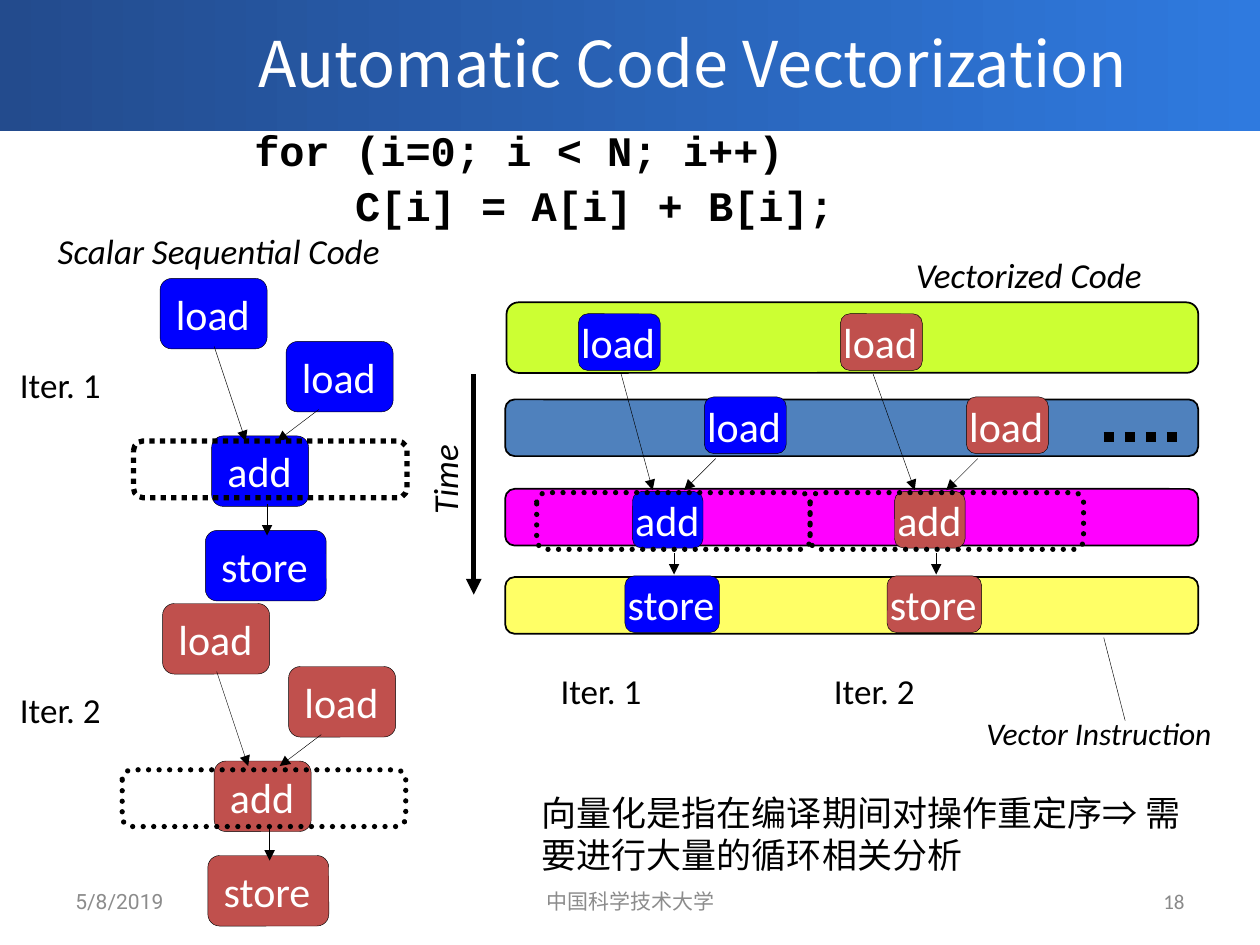
from lxml.etree import SubElement
from pptx import Presentation
from pptx.dml.color import RGBColor
from pptx.enum.dml import MSO_LINE
from pptx.enum.shapes import MSO_CONNECTOR, MSO_SHAPE
from pptx.enum.text import MSO_ANCHOR, MSO_AUTO_SIZE, PP_ALIGN
from pptx.oxml.ns import qn
from pptx.util import Inches, Pt

BLACK, WHITE, BLUE, RED, GREY = "000000", "FFFFFF", "0000FF", "C0504D", "8C8C8C"
LEFT, CENTER, RIGHT = PP_ALIGN.LEFT, PP_ALIGN.CENTER, PP_ALIGN.RIGHT

TITLE = "Automatic Code Vectorization"
LOOP = ["for (i=0; i < N; i++)", "    C[i] = A[i] + B[i];"]
SUMMARY = "向量化是指在编译期间对操作重定序⇒ 需要进行大量的循环相关分析"
FOOTERS = [  # text, left, width, alignment, font, colour
    ("5/8/2019", 0.5, 2.33, LEFT, "Roboto", GREY),
    ("中国科学技术大学", 3.42, 3.17, CENTER, "Roboto", GREY),
    ("18", 7.17, 2.33, RIGHT, "Calibri", "898989"),
]

# Operations of the first iteration: name, left, top, width
SCALAR_OPS = [("load", 1.27, 2.21, 0.85), ("load", 2.27, 2.71, 0.85),
              ("add", 1.68, 3.46, 0.77), ("store", 1.63, 4.21, 0.96)]
SCALAR_ARROWS = [(1.7, 2.75, 1.95, 3.5), (2.53, 3.25, 2.2, 3.5), (2.12, 4, 2.12, 4.25)]
VECTOR_OPS = [("load", 4.59, 2.49, 0.65), ("load", 5.59, 3.15, 0.65),
              ("add", 5.02, 3.9, 0.56), ("store", 4.96, 4.57, 0.75)]
VECTOR_ARROWS = [(5.68, 3.64, 5.43, 3.89), (5.35, 4.39, 5.35, 4.56)]

# Iterations: label, colour, shift from the first one, and what differs
SCALAR_ITERATIONS = [
    ("Iter. 1", BLUE, 0, 0, (1.06, 3.5, 2.17, 0.45), "flat"),
    ("Iter. 2", RED, 0.02, 2.58, (0.97, 6.11, 2.25, 0.45), "rnd"),
]
VECTOR_ITERATIONS = [
    ("Iter. 1", BLUE, 0, (4.93, 2.97, 5.18, 3.89)),
    ("Iter. 2", RED, 2.08, (6.93, 2.97, 7.26, 3.89)),
]
VECTOR_BANDS = [  # left, top, width, height, colour
    (4.01, 3.17, 5.5, 0.45, "4F81BD"), (4.02, 2.4, 5.49, 0.56, "CCFF33"),
    (4.01, 3.88, 5.5, 0.45, "FF00FF"), (4.01, 4.58, 5.5, 0.45, "FFFF66"),
]


def rgb(value):
    return RGBColor.from_string(value)


def write(shape, lines, wrap=False, grow=True, inset=None, anchor=MSO_ANCHOR.MIDDLE,
          align=LEFT, color=BLACK, space=0, **font):
    """Fill a shape with paragraphs that share one format."""
    frame = shape.text_frame
    frame.text = "\n".join(lines)
    frame.word_wrap = wrap
    frame.vertical_anchor = anchor
    frame.auto_size = MSO_AUTO_SIZE.SHAPE_TO_FIT_TEXT if grow else MSO_AUTO_SIZE.NONE
    if inset is not None:
        for side in ("left", "top", "right", "bottom"):
            setattr(frame, f"margin_{side}", Inches(inset))
    for index, paragraph in enumerate(frame.paragraphs):
        paragraph.alignment = align
        if index:
            paragraph.space_before = Pt(space)
        for run in paragraph.runs:
            run.font.color.rgb = rgb(color)
            for name, value in font.items():
                setattr(run.font, name, value)


def label(shapes, box, *lines, size=20, name="Calibri", **options):
    caption = shapes.add_textbox(*map(Inches, box))
    write(caption, lines, size=Pt(size), name=name, **options)
    return caption


def stroke(line, weight, dotted):
    line.color.rgb = rgb(BLACK)
    line.width = Pt(weight)
    if dotted:
        line.dash_style = MSO_LINE.ROUND_DOT


def rounded(shapes, box, fill=None, weight=0.25, dotted=False, cap="flat"):
    shape = shapes.add_shape(MSO_SHAPE.ROUNDED_RECTANGLE, *map(Inches, box))
    shape.shadow.inherit = False
    if fill:
        shape.fill.solid()
        shape.fill.fore_color.rgb = rgb(fill)
    else:
        shape.fill.background()
    stroke(shape.line, weight, dotted)
    shape.element.spPr.find(qn("a:ln")).set("cap", cap)
    return shape


def line(shapes, ends, weight=0.25, dotted=False, arrow=True):
    connector = shapes.add_connector(MSO_CONNECTOR.STRAIGHT, *map(Inches, ends))
    stroke(connector.line, weight, dotted)
    properties = connector.element.spPr
    if arrow:
        SubElement(properties.find(qn("a:ln")), qn("a:tailEnd"), type="triangle")
    SubElement(properties, qn("a:effectLst"))


def iteration(shapes, ops, arrows, color, dx, dy, height, inset=None):
    """Draw the operations of one loop iteration and the arrows between them."""
    for name, left, top, width in ops:
        op = rounded(shapes, (left + dx, top + dy, width, height), color)
        write(op, [name], inset=inset, color=WHITE, size=Pt(24), name="Calibri")
    for x1, y1, x2, y2 in arrows:
        line(shapes, (x1 + dx, y1 + dy, x2 + dx, y2 + dy))


def add_header(slide):
    title = slide.shapes.title
    title.left, title.top, title.width, title.height = map(Inches, (1, 0, 9, 0.99))
    write(title, [TITLE], wrap=True, grow=False, align=CENTER, color=WHITE,
          size=Pt(36), name="Noto Sans CJK SC")
    banner = slide.shapes.add_shape(MSO_SHAPE.RECTANGLE,
                                    *map(Inches, (0, -0.03, 10, 1.07)))
    banner.shadow.inherit = False
    banner.line.fill.background()
    banner.fill.gradient()
    banner.fill.gradient_angle = 0
    for stop, color in zip(banner.fill.gradient_stops, ("234B8D", "2F7ADF")):
        stop.color.rgb = rgb(color)
    title.element.addprevious(banner.element)


def add_scalar_code(shapes):
    for _, color, dx, dy, _, _ in SCALAR_ITERATIONS:
        iteration(shapes, SCALAR_OPS, SCALAR_ARROWS, color, dx, dy, 0.56)
    for name, _, _, dy, outline, cap in SCALAR_ITERATIONS:
        rounded(shapes, outline, weight=3, dotted=True, cap=cap)
        label(shapes, (0.06, 2.83 + dy, 0.85, 0.44), name)
    label(shapes, (0.36, 1.77, 2.78, 0.44), "Scalar Sequential Code", italic=True)


def add_vector_code(shapes):
    for *box, color in VECTOR_BANDS:
        rounded(shapes, box, color, weight=1)
    label(shapes, (7.73, 5.62, 2.01, 0.4), "Vector Instruction", size=18, italic=True)
    for _, color, dx, first_load in VECTOR_ITERATIONS:
        iteration(shapes, VECTOR_OPS, VECTOR_ARROWS, color, dx, 0, 0.45, inset=0)
        line(shapes, first_load)
    for index, (name, *_) in enumerate(VECTOR_ITERATIONS):
        dx = index * 2.17
        rounded(shapes, (4.26 + dx, 3.91, 2.17, 0.45), weight=3, dotted=True, cap="rnd")
        label(shapes, (4.35 + dx, 5.26, 1.08, 0.44), name, wrap=True)
    line(shapes, (8.76, 5.06, 8.93, 5.72), arrow=False)
    line(shapes, (3.76, 2.97, 3.76, 4.72), weight=3)
    time = label(shapes, (3.15, 3.58, 0.76, 0.44), "Time", anchor=MSO_ANCHOR.TOP,
                 italic=True)
    time.rotation = 270
    line(shapes, (8.76, 3.47, 9.35, 3.47), weight=6, dotted=True, arrow=False)


def main():
    deck = Presentation()
    deck.slide_width, deck.slide_height = Inches(10), Inches(7.5)
    slide = deck.slides.add_slide(deck.slide_layouts[5])
    shapes = slide.shapes
    add_header(slide)
    for text, left, width, align, font, color in FOOTERS:
        label(shapes, (left, 6.95, width, 0.4), text, size=12, name=font,
              wrap=True, grow=False, align=align, color=color)
    label(shapes, (1.92, 0.93, 4.84, 0.95), *LOOP, size=24, name="Courier New",
          bold=True, space=3)
    add_scalar_code(shapes.add_group_shape().shapes)
    label(shapes, (4.2, 6.23, 5.31, 0.77), SUMMARY, name="Arial", wrap=True)
    label(shapes, (7.17, 1.96, 2.01, 0.44), "Vectorized Code", italic=True)
    add_vector_code(shapes.add_group_shape().shapes)
    deck.save("out.pptx")


if __name__ == "__main__":
    main()
